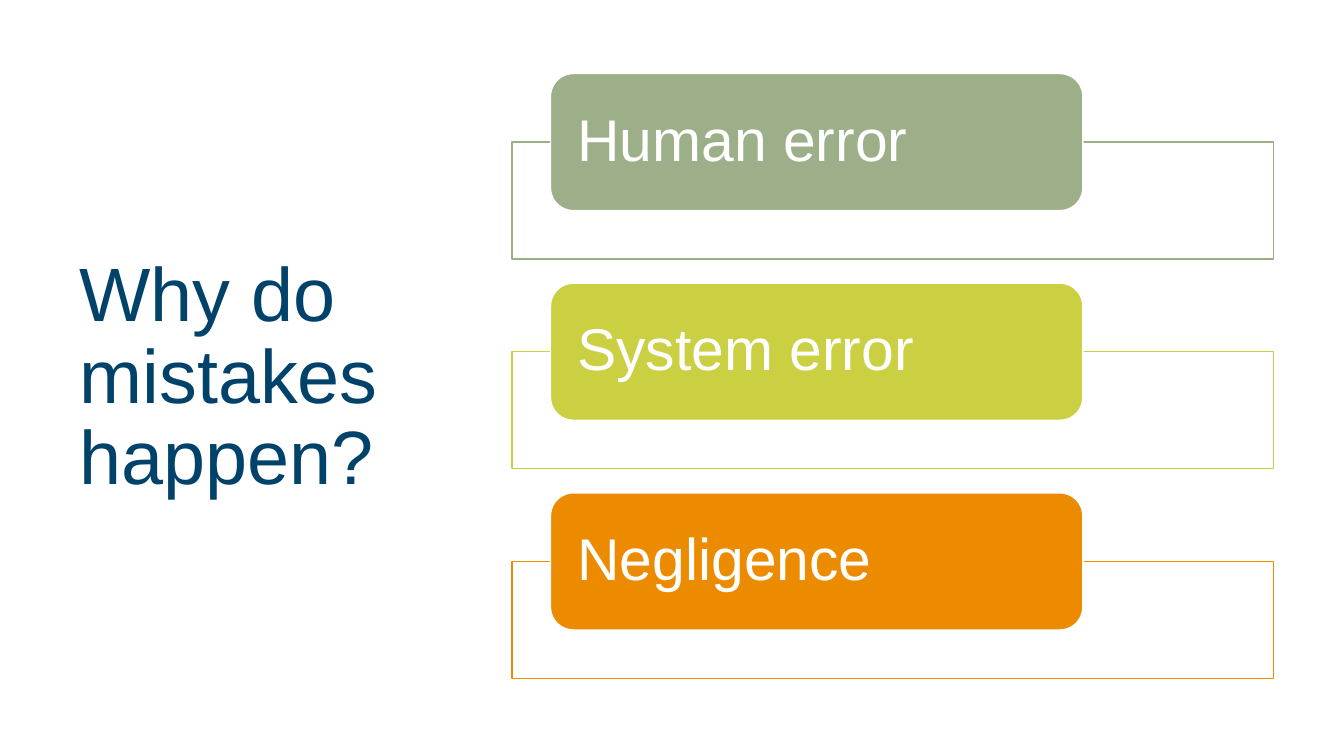
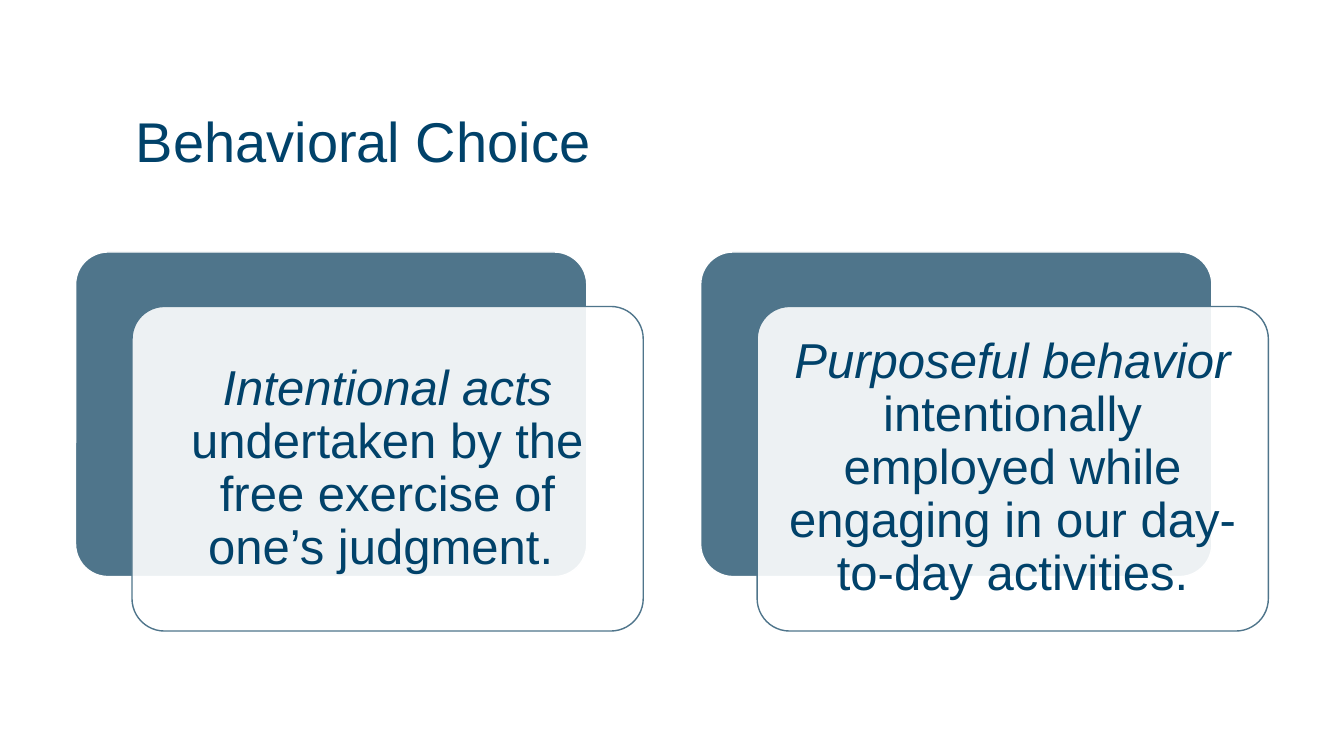
import pptx
import pptx.dml.color
import pptx.enum.shapes
import pptx.enum.text
import pptx.oxml.ns
import pptx.util
from lxml import etree

EMU_PER_PX = 9144
WHITE = "FFFFFF"
NAVY = "01426A"
STEEL = "4F758B"
SAGE = "9CAF88"
LIME = "CAD042"
ORANGE = "ED8B00"

Align = pptx.enum.text.PP_ALIGN
Anchor = pptx.enum.text.MSO_ANCHOR
Preset = pptx.enum.shapes.MSO_SHAPE


def px(length):
    return pptx.util.Emu(length * EMU_PER_PX)


def color(hex_code):
    return pptx.dml.color.RGBColor.from_string(hex_code)


class Deck:
    font = "Arial"
    line_spacing = 0.9
    outline = 1
    veil_alpha = 90

    def __init__(self, width, height):
        self.presentation = pptx.Presentation()
        self.presentation.slide_width = px(width)
        self.presentation.slide_height = px(height)
        self.slide = None

    def new_slide(self):
        self.slide = self.presentation.slides.add_slide(self.presentation.slide_layouts[6])

    def add_text(self, shape, runs, size, ink, anchor, align=Align.LEFT, insets=(10, 5)):
        frame = shape.text_frame
        frame.word_wrap = True
        frame.vertical_anchor = anchor
        frame.margin_left = frame.margin_right = px(insets[0])
        frame.margin_top = frame.margin_bottom = px(insets[1])
        paragraph = frame.paragraphs[0]
        paragraph.alignment = align
        paragraph.line_spacing = self.line_spacing
        for text, italic in runs:
            run = paragraph.add_run()
            run.text = text
            run.font.name = self.font
            run.font.size = pptx.util.Pt(size)
            run.font.italic = italic
            run.font.color.rgb = color(ink)

    def title(self, text, box, size, anchor):
        heading = self.slide.shapes.add_textbox(*map(px, box))
        self.add_text(heading, [(text, False)], size, NAVY, anchor)

    def panel(self, preset, box, fill, line, corner=None, alpha=None):
        panel = self.slide.shapes.add_shape(preset, *map(px, box))
        panel.shadow.inherit = False
        panel.fill.solid()
        panel.fill.fore_color.rgb = color(fill)
        panel.line.color.rgb = color(line)
        panel.line.width = pptx.util.Pt(self.outline)
        if corner is not None:
            panel.adjustments[0] = corner
        if alpha is not None:
            tint = panel.element.spPr.find("/".join(map(pptx.oxml.ns.qn, ("a:solidFill", "a:srgbClr"))))
            etree.SubElement(tint, pptx.oxml.ns.qn("a:alpha"), val=str(alpha * 1000))
        return panel

    def cause(self, text, top, accent):
        self.panel(Preset.RECTANGLE, (508, top + 68, 755, 116), WHITE, accent, alpha=self.veil_alpha)
        label = self.panel(Preset.ROUNDED_RECTANGLE, (546, top, 528, 136), accent, WHITE)
        self.add_text(label, [(text, False)], 42, WHITE, Anchor.MIDDLE, insets=(20, 0))

    def definition(self, term, meaning, left):
        top, width, height = 250, 507, 322
        self.panel(Preset.ROUNDED_RECTANGLE, (left, top, width, height), STEEL, WHITE, corner=0.1)
        card = self.panel(
            Preset.ROUNDED_RECTANGLE, (left + 56, top + 54, width, height),
            WHITE, STEEL, corner=0.1, alpha=self.veil_alpha,
        )
        self.add_text(
            card, [(term, True), (meaning, False)], 35, NAVY,
            Anchor.MIDDLE, Align.CENTER, insets=(15, 15),
        )

    def save(self):
        self.presentation.save("out.pptx")


def main():
    deck = Deck(1333, 750)

    deck.new_slide()
    deck.title("Why do mistakes happen?", (69, 70, 374, 611), 54, Anchor.MIDDLE)
    causes = [("Human error", SAGE), ("System error", LIME), ("Negligence", ORANGE)]
    for index, (cause, accent) in enumerate(causes):
        deck.cause(cause, 73 + index * 208, accent)

    deck.new_slide()
    deck.title("Behavioral Choice", (125, 108, 1083, 75), 40, Anchor.TOP)
    definitions = [
        ("Intentional acts", " undertaken by the free exercise of one’s judgment. "),
        ("Purposeful behavior", " intentionally employed while engaging in our day-to-day activities."),
    ]
    for index, (term, meaning) in enumerate(definitions):
        deck.definition(term, meaning, 75 + index * 620)

    deck.save()


if __name__ == "__main__":
    main()
